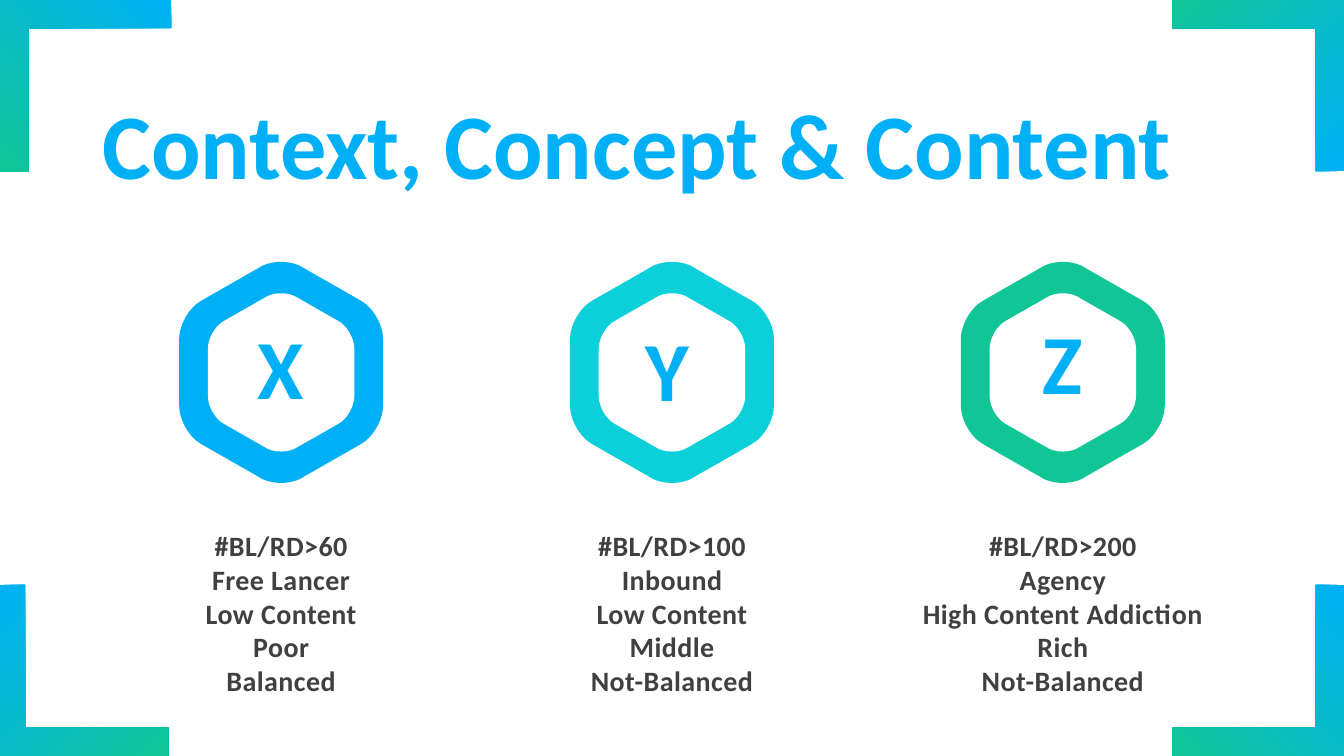
from dataclasses import dataclass

from lxml.etree import SubElement
from pptx import Presentation
from pptx.dml.color import RGBColor
from pptx.enum.text import MSO_AUTO_SIZE, PP_ALIGN
from pptx.oxml.ns import qn
from pptx.util import Cm, Pt


@dataclass(frozen=True)
class Theme:
    """Colours and type of the slide."""
    blue: RGBColor = RGBColor(0x00, 0xB0, 0xF6)
    cyan: RGBColor = RGBColor(0x0B, 0xD0, 0xD9)
    green: RGBColor = RGBColor(0x10, 0xC6, 0x96)
    white: RGBColor = RGBColor(0xFF, 0xFF, 0xFF)
    ink: RGBColor = RGBColor(0x40, 0x40, 0x40)
    font: str = "Calibri"
    title_size: int = 66
    letter_size: int = 60
    list_size: int = 20


@dataclass(frozen=True)
class Box:
    """A rectangle in centimetres."""
    left: float
    top: float
    width: float
    height: float

    def centred(self, width, height, right=0, down=0):
        """Return a box of the given size around this centre, then shifted."""
        return Box(self.left + (self.width - width) / 2 + right,
                   self.top + (self.height - height) / 2 + down, width, height)

    def point(self, x, y):
        """Turn fractions of the box into a slide position."""
        return Cm(self.left + x * self.width), Cm(self.top + y * self.height)


@dataclass(frozen=True)
class Profile:
    """One column: its badge letter and its list."""
    letter: str
    color: RGBColor
    lines: tuple
    list_width: float
    letter_right: float
    letter_down: float


THEME = Theme()
PAGE = Box(0, 0, 33.87, 19.05)
BRACKET_SIZE = 4.32
COLUMN_STEP = 9.85
PROFILES = (
    Profile("X", THEME.blue,
            ("#BL/RD>60", "Free Lancer", "Low Content", "Poor", "Balanced"),
            4.37, 0, -0.15),
    Profile("Y", THEME.cyan,
            ("#BL/RD>100", "Inbound", "Low Content", "Middle", "Not-Balanced"),
            4.65, -0.12, -0.1),
    Profile("Z", THEME.green,
            ("#BL/RD>200", "Agency", "High Content Addiction", "Rich", "Not-Balanced"),
            7.62, 0, -0.28),
)


def add_outline(shapes, box, fractions):
    """Draw a closed outline from fractions of the box."""
    points = [box.point(x, y) for x, y in fractions]
    builder = shapes.build_freeform(*points[0])
    builder.add_line_segments(points[1:], close=True)
    shape = builder.convert_to_shape()
    shape.shadow.inherit = False
    shape.line.fill.background()
    return shape


def fill_gradient(fill, angle):
    """Fill with the blue to green gradient."""
    fill.gradient()
    fill.gradient_angle = angle
    for stop, color in zip(fill.gradient_stops, (THEME.blue, THEME.green)):
        stop.color.rgb = color


def add_bracket(shapes, box, on_right, on_bottom, angle):
    """Draw an L-shaped gradient bracket in one corner."""
    arm = 0.165
    corner = ((0, 0), (1, 0), (1, arm), (arm, arm), (arm, 1), (0, 1))
    shape = add_outline(shapes, box, [(1 - x if on_right else x, 1 - y if on_bottom else y)
                                      for x, y in corner])
    fill_gradient(shape.fill, angle)


def add_frame(shapes, page):
    """Place a bracket in each corner of the page."""
    right = page.left + page.width - BRACKET_SIZE
    bottom = page.top + page.height - BRACKET_SIZE
    for left, top, on_right, on_bottom, angle in (
            (page.left, page.top, False, False, 225),
            (page.left - 0.08, bottom, False, True, 315),
            (right, page.top, True, False, 135),
            (right, bottom, True, True, 225)):
        add_bracket(shapes, Box(left, top, BRACKET_SIZE, BRACKET_SIZE),
                    on_right, on_bottom, angle)


def add_hexagon(shapes, box, color):
    """Draw a hexagon whose corners are cubic curves."""
    shape = add_outline(shapes, box, ((0, 0), (1, 0), (1, 1), (0, 1)))
    shape.fill.solid()
    shape.fill.fore_color.rgb = color
    shoulder = ((0, 0.35), (0, 0.285), (0.05, 0.205), (0.11, 0.175))
    peak = ((0.385, 0.03), (0.445, -0.01), (0.555, -0.01), (0.615, 0.03))
    upper = [shoulder, peak, [(1 - x, y) for x, y in reversed(shoulder)]]
    lower = [[(1 - x, 1 - y) for x, y in corner] for corner in upper]
    outline = shape._element.find(".//" + qn("a:path"))
    width, height = int(outline.get("w")), int(outline.get("h"))
    for segment in list(outline):
        outline.remove(segment)

    def add_segment(tag, points):
        """Append one drawing command to the outline."""
        segment = SubElement(outline, qn(tag))
        for x, y in points:
            SubElement(segment, qn("a:pt"), x=str(round(x * width)), y=str(round(y * height)))

    for index, (start, *curve) in enumerate(upper + lower):
        add_segment("a:lnTo" if index else "a:moveTo", [start])
        add_segment("a:cubicBezTo", curve)
    add_segment("a:close", [])


def add_text(shapes, box, lines, size, color=None, align=PP_ALIGN.CENTER, wrap=False, spacing=0):
    """Write bold lines, one paragraph each, in a colour or else the gradient."""
    frame = shapes.add_textbox(*box.point(0, 0), Cm(box.width), Cm(box.height)).text_frame
    frame.word_wrap = wrap
    frame.auto_size = MSO_AUTO_SIZE.SHAPE_TO_FIT_TEXT
    for index, line in enumerate(lines):
        para = frame.add_paragraph() if index else frame.paragraphs[0]
        para.alignment = align
        span = para.add_run()
        span.text = line
        span.font.name = THEME.font
        span.font.size = Pt(size)
        span.font.bold = True
        if color is None:
            fill_gradient(span.font.fill, 315)
        else:
            span.font.color.rgb = color
        if spacing:
            span._r.get_or_add_rPr().set("spc", str(spacing))


def add_profile(shapes, box, profile):
    """Place a badge at the top of the column and its list below."""
    badge = Box(box.left, box.top, box.width, 5.57)
    group = shapes.add_group_shape()
    add_hexagon(group.shapes, badge, profile.color)
    add_hexagon(group.shapes, badge.centred(3.69, 3.99), THEME.white)
    letter = badge.centred(3.69, 2.82, profile.letter_right, profile.letter_down)
    add_text(shapes, letter, (profile.letter,), THEME.letter_size, wrap=True)
    list_height = 4.52
    column = Box(box.left, box.top + box.height - list_height, box.width, list_height)
    add_text(shapes, column.centred(profile.list_width, list_height), profile.lines,
             THEME.list_size, THEME.ink, spacing=30)


def add_profile_slide(deck, page):
    """Build the slide: frame, title and three columns."""
    shapes = deck.slides.add_slide(deck.slide_layouts[6]).shapes
    add_frame(shapes, page)
    add_text(shapes, Box(page.left + 2.33, page.top + 2.08, 27.71, 3.07),
             ("Context, Concept & Content",), THEME.title_size, align=PP_ALIGN.LEFT)
    middle = Box(page.left + (page.width - 5.14) / 2, page.top + 6.6, 5.14, 11.12)
    for index, profile in enumerate(PROFILES):
        offset = (index - 1) * COLUMN_STEP
        add_profile(shapes, middle.centred(middle.width, middle.height, offset), profile)


def main():
    """Create and save the deck."""
    deck = Presentation()
    deck.slide_width, deck.slide_height = Cm(PAGE.width), Cm(PAGE.height)
    add_profile_slide(deck, PAGE)
    deck.save("out.pptx")


if __name__ == "__main__":
    main()
